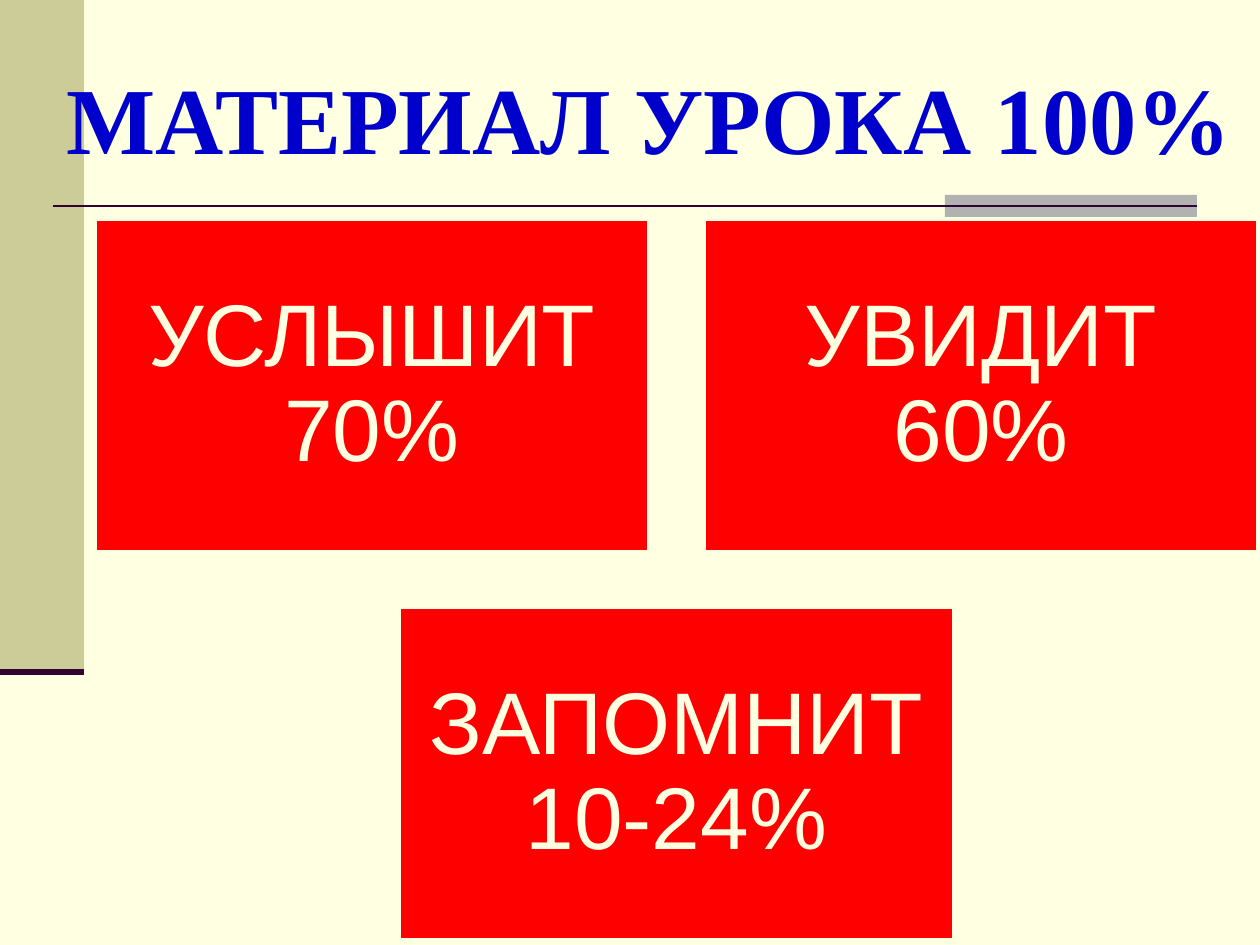
from lxml import etree
from pptx import Presentation
from pptx.dml.color import RGBColor
from pptx.enum.shapes import MSO_CONNECTOR, MSO_SHAPE
from pptx.enum.text import MSO_ANCHOR, PP_ALIGN
from pptx.oxml.ns import qn
from pptx.util import Emu, Pt

STRAIGHT = MSO_CONNECTOR.STRAIGHT
RECTANGLE = MSO_SHAPE.RECTANGLE
MIDDLE = MSO_ANCHOR.MIDDLE
LEFT, CENTER = PP_ALIGN.LEFT, PP_ALIGN.CENTER

# Content
TITLE = "МАТЕРИАЛ УРОКА 100%"
CARD_ROWS = [["УСЛЫШИТ 70%", "УВИДИТ 60%"], ["ЗАПОМНИТ 10-24%"]]

# Colours
CREAM, OLIVE, GREY = "FFFFE1", "CCCC99", "B2B2B2"
PLUM, BLUE, RED = "330033", "0000CC", "FF0000"

# Layout in px, 126 to the inch
SLIDE_WIDTH, SLIDE_HEIGHT = 1260, 945
BANDS = [(0, 0, 84, 672, OLIVE), (945, 195, 252, 25, GREY)]
RULES = [(53, 206, 1197, 206, 1.5), (0, 672, 84, 672, 3.5)]
TITLE_BOX = (54, 38, 1206, 157)
GRID_LEFT, GRID_TOP, GRID_WIDTH = 95, 219, 1163
CARD_WIDTH, CARD_HEIGHT, CARD_GAP, CARD_INSET = 554, 333, 55, 26


def px(value):
    return Emu(round(value * 914400 / 126))


def color(value):
    return RGBColor.from_string(value)


def add_rectangle(slide, left, top, width, height, fill):
    shape = slide.shapes.add_shape(RECTANGLE, px(left), px(top), px(width), px(height))
    shape.shadow.inherit = False
    shape.fill.solid()
    shape.fill.fore_color.rgb = color(fill)
    shape.line.fill.background()
    return shape


def add_rule(slide, x1, y1, x2, y2, weight):
    rule = slide.shapes.add_connector(STRAIGHT, px(x1), px(y1), px(x2), px(y2))
    rule.line.color.rgb = color(PLUM)
    rule.line.width = Pt(weight)
    etree.SubElement(rule._element.spPr, qn("a:effectLst"))


def write_text(shape, text, font, size, fill, bold, alignment):
    frame = shape.text_frame
    frame.word_wrap = True
    frame.vertical_anchor = MIDDLE
    paragraph = frame.paragraphs[0]
    paragraph.alignment = alignment
    run = paragraph.add_run()
    run.text = text
    run.font.name = font
    run.font.size = Pt(size)
    run.font.bold = bold
    run.font.color.rgb = color(fill)
    return frame


def add_card(slide, left, top, text):
    card = add_rectangle(slide, left, top, CARD_WIDTH, CARD_HEIGHT, RED)
    card.line.color.rgb = color(CREAM)
    card.line.width = Pt(2)
    frame = write_text(card, text, "Arial", 50, CREAM, False, CENTER)
    frame.margin_left = frame.margin_right = px(CARD_INSET)
    frame.margin_top = frame.margin_bottom = px(CARD_INSET)
    frame.paragraphs[0].line_spacing = 0.9


def main():
    presentation = Presentation()
    presentation.slide_width = px(SLIDE_WIDTH)
    presentation.slide_height = px(SLIDE_HEIGHT)
    slide = presentation.slides.add_slide(presentation.slide_layouts[6])
    slide.background.fill.solid()
    slide.background.fill.fore_color.rgb = color(CREAM)

    # Side band, accent and rules
    for band in BANDS:
        add_rectangle(slide, *band)
    for rule in RULES:
        add_rule(slide, *rule)

    # Title
    title = slide.shapes.add_textbox(*map(px, TITLE_BOX))
    write_text(title, TITLE, "Times New Roman", 54, BLUE, True, LEFT)

    # Cards, each row centred in the grid
    for row, texts in enumerate(CARD_ROWS):
        row_width = len(texts) * (CARD_WIDTH + CARD_GAP) - CARD_GAP
        row_left = GRID_LEFT + (GRID_WIDTH - row_width) / 2
        top = GRID_TOP + row * (CARD_HEIGHT + CARD_GAP)
        for column, text in enumerate(texts):
            add_card(slide, row_left + column * (CARD_WIDTH + CARD_GAP), top, text)

    presentation.save("out.pptx")


if __name__ == "__main__":
    main()
